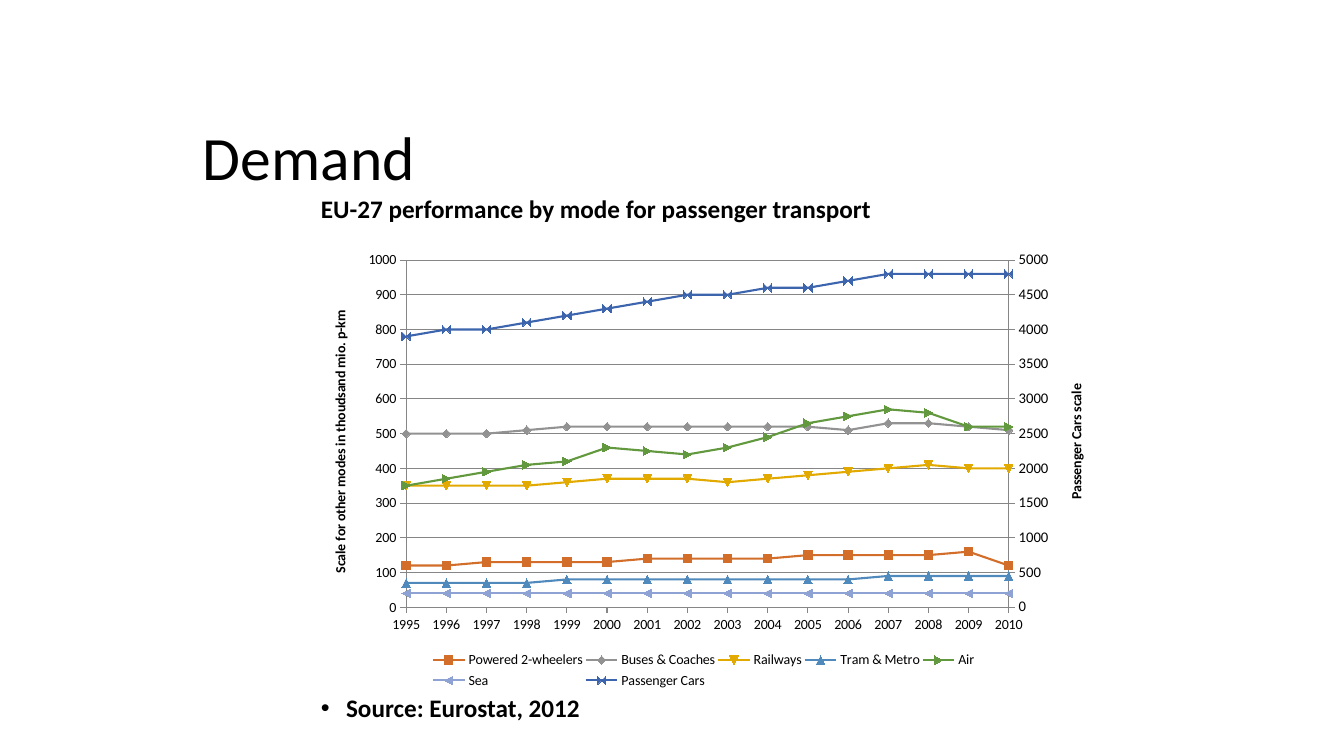
from copy import deepcopy

from lxml.etree import SubElement
from pptx import Presentation
from pptx.chart.axis import ValueAxis
from pptx.chart.data import CategoryChartData
from pptx.dml.color import RGBColor
from pptx.enum.chart import XL_CHART_TYPE, XL_LEGEND_POSITION, XL_TICK_MARK
from pptx.enum.text import MSO_ANCHOR
from pptx.oxml.ns import qn
from pptx.util import Pt

PX = 914400 / 100.8
FONT = "Calibri"
COLORS = {
    "text": "000000",
    "grid": "868686",
    "orange": "D26E2A",
    "grey": "929292",
    "gold": "E2AA00",
    "light blue": "508ABD",
    "green": "62993E",
    "pale blue": "8FA2D4",
    "blue": "3C65AE",
}
YEARS = [str(year) for year in range(1995, 2011)]
# name, colour, values
MODES = [
    ("Powered 2-wheelers", "orange",
     [120, 120, 130, 130, 130, 130, 140, 140, 140, 140, 150, 150, 150, 150, 160, 120]),
    ("Buses & Coaches", "grey",
     [500, 500, 500, 510, 520, 520, 520, 520, 520, 520, 520, 510, 530, 530, 520, 510]),
    ("Railways", "gold",
     [350, 350, 350, 350, 360, 370, 370, 370, 360, 370, 380, 390, 400, 410, 400, 400]),
    ("Tram & Metro", "light blue",
     [70, 70, 70, 70, 80, 80, 80, 80, 80, 80, 80, 80, 90, 90, 90, 90]),
    ("Air", "green",
     [350, 370, 390, 410, 420, 460, 450, 440, 460, 490, 530, 550, 570, 560, 520, 520]),
    ("Sea", "pale blue", [40] * len(YEARS)),
    ("Passenger Cars", "blue",
     [3900, 4000, 4000, 4100, 4200, 4300, 4400, 4500, 4500, 4600, 4600, 4700, 4800, 4800,
      4800, 4800]),
]


def px(length):
    return round(length * PX)


def rgb(name):
    return RGBColor.from_string(COLORS[name])


def set_value(parent, tag, value):
    parent.find(qn(tag)).set("val", value)


def set_layout(parent, after, inner, **fractions):
    """Place a chart part by fractions of the chart's size."""
    old = parent.find(qn("c:layout"))
    if old is not None:
        parent.remove(old)
    layout = SubElement(parent, qn("c:layout"))
    manual = SubElement(layout, qn("c:manualLayout"))
    settings = {"layoutTarget": "inner"} if inner else {}
    settings |= {"xMode": "edge", "yMode": "edge"} | fractions
    for tag, value in settings.items():
        SubElement(manual, qn(f"c:{tag}")).set("val", str(value))
    if after is None:
        parent.insert(0, layout)
    else:
        parent.find(qn(after)).addnext(layout)


class Slide:
    def __init__(self, page):
        self.page = page

    def style(self, font, size, bold=False):
        font.name, font.size, font.bold = FONT, Pt(size), bold
        font.color.rgb = rgb("text")

    def text(self, left, top, width, height, words, size, bold=False,
             anchor=MSO_ANCHOR.TOP, spacing=1.0, bullet=False):
        box = self.page.shapes.add_textbox(px(left), px(top), px(width), px(height))
        frame = box.text_frame
        frame.word_wrap = True
        frame.vertical_anchor = anchor
        para = frame.paragraphs[0]
        para.line_spacing = spacing
        if bullet:
            properties = para._p.get_or_add_pPr()
            properties.set("marL", "228600")
            properties.set("indent", "-228600")
            SubElement(properties, qn("a:buFont")).set("typeface", "Arial")
            SubElement(properties, qn("a:buChar")).set("char", "•")
        span = para.add_run()
        span.text = words
        self.style(span.font, size, bold)

    def axis(self, axis, size):
        axis.major_tick_mark = XL_TICK_MARK.OUTSIDE
        axis.minor_tick_mark = XL_TICK_MARK.NONE
        axis.format.line.color.rgb = rgb("grid")
        self.style(axis.tick_labels.font, size)

    def value_axis(self, axis, title, maximum, size):
        self.axis(axis, size)
        axis.minimum_scale, axis.maximum_scale = 0, maximum
        axis.major_unit = maximum / 10
        frame = axis.axis_title.text_frame
        frame.clear()
        frame._txBody.bodyPr.set("rot", "-5400000")
        frame._txBody.bodyPr.set("vert", "horz")
        span = frame.paragraphs[0].add_run()
        span.text = title
        self.style(span.font, 10, True)

    def right_axis(self, chart):
        """Move the last series to a second plot and return its value axis."""
        area = chart._chartSpace.chart.plotArea
        plot = area.find(qn("c:lineChart"))
        right_plot = deepcopy(plot)
        plot.remove(plot.findall(qn("c:ser"))[-1])
        for series in right_plot.findall(qn("c:ser"))[:-1]:
            right_plot.remove(series)
        plot.addnext(right_plot)
        category, value = area.find(qn("c:catAx")), area.find(qn("c:valAx"))
        right_category, right_value = deepcopy(category), deepcopy(value)
        value.addnext(right_value)
        right_value.addnext(right_category)
        ids = ["5001", "5002"]
        for element, number in zip(right_plot.findall(qn("c:axId")), ids):
            element.set("val", number)
        for axis, own, other in ((right_category, *ids), (right_value, *ids[::-1])):
            set_value(axis, "c:axId", own)
            set_value(axis, "c:crossAx", other)
        set_value(right_category, "c:delete", "1")
        set_value(right_value, "c:axPos", "r")
        set_value(right_value, "c:crosses", "max")
        axis = ValueAxis(right_value)
        axis.has_major_gridlines = False
        return axis

    def chart(self, left, top, width, height):
        data = CategoryChartData()
        data.categories = YEARS
        for name, _, values in MODES:
            data.add_series(name, values)
        chart = self.page.shapes.add_chart(
            XL_CHART_TYPE.LINE_MARKERS, px(left), px(top), px(width), px(height), data).chart
        chart.has_title = False
        self.style(chart.font, 18)
        chart.plots[0].vary_by_categories = False
        for series, (_, color, _) in zip(chart.plots[0].series, MODES):
            series.smooth = False
            series.format.line.width = Pt(1.5)
            series.marker.size = 6
            marker = series.marker.format
            marker.fill.solid()
            for paint in (series.format.line.color, marker.fill.fore_color, marker.line.color):
                paint.rgb = rgb(color)

        self.axis(chart.category_axis, 10)
        axis = chart.value_axis
        axis.has_major_gridlines = True
        axis.major_gridlines.format.line.color.rgb = rgb("grid")
        value = axis._element
        if value.find(qn("c:crossBetween")) is None:
            between = SubElement(value, qn("c:crossBetween"))
            value.find(qn("c:crosses")).addnext(between)
        set_value(value, "c:crossBetween", "midCat")
        self.value_axis(axis, "Scale for other modes in thoudsand mio. p-km", 1000, 10)
        self.value_axis(self.right_axis(chart), "Passenger Cars scale", 5000, 10.5)

        chart.has_legend = True
        legend = chart.legend
        legend.position = XL_LEGEND_POSITION.BOTTOM
        legend.include_in_layout = False
        self.style(legend.font, 10)
        set_layout(legend._element, "c:legendPos", False, x=0.15, y=0.9, w=0.69, h=0.1)
        set_layout(chart._chartSpace.chart.plotArea, None, True, x=0.12, y=0.04, w=0.76, h=0.77)


def main():
    deck = Presentation()
    deck.slide_width, deck.slide_height = px(1344), px(756)
    slide = Slide(deck.slides.add_slide(deck.slide_layouts[6]))
    slide.text(311, 691, 793, 40, "Source: Eurostat, 2012", 18, True, spacing=0.9, bullet=True)
    slide.text(193, 137, 1058, 48, "Demand", 44, anchor=MSO_ANCHOR.MIDDLE, spacing=0.9)
    slide.text(311, 188, 793, 40, "EU-27 performance by mode for passenger transport", 18, True)
    slide.chart(311, 242, 793, 451)
    deck.save("out.pptx")


if __name__ == "__main__":
    main()
